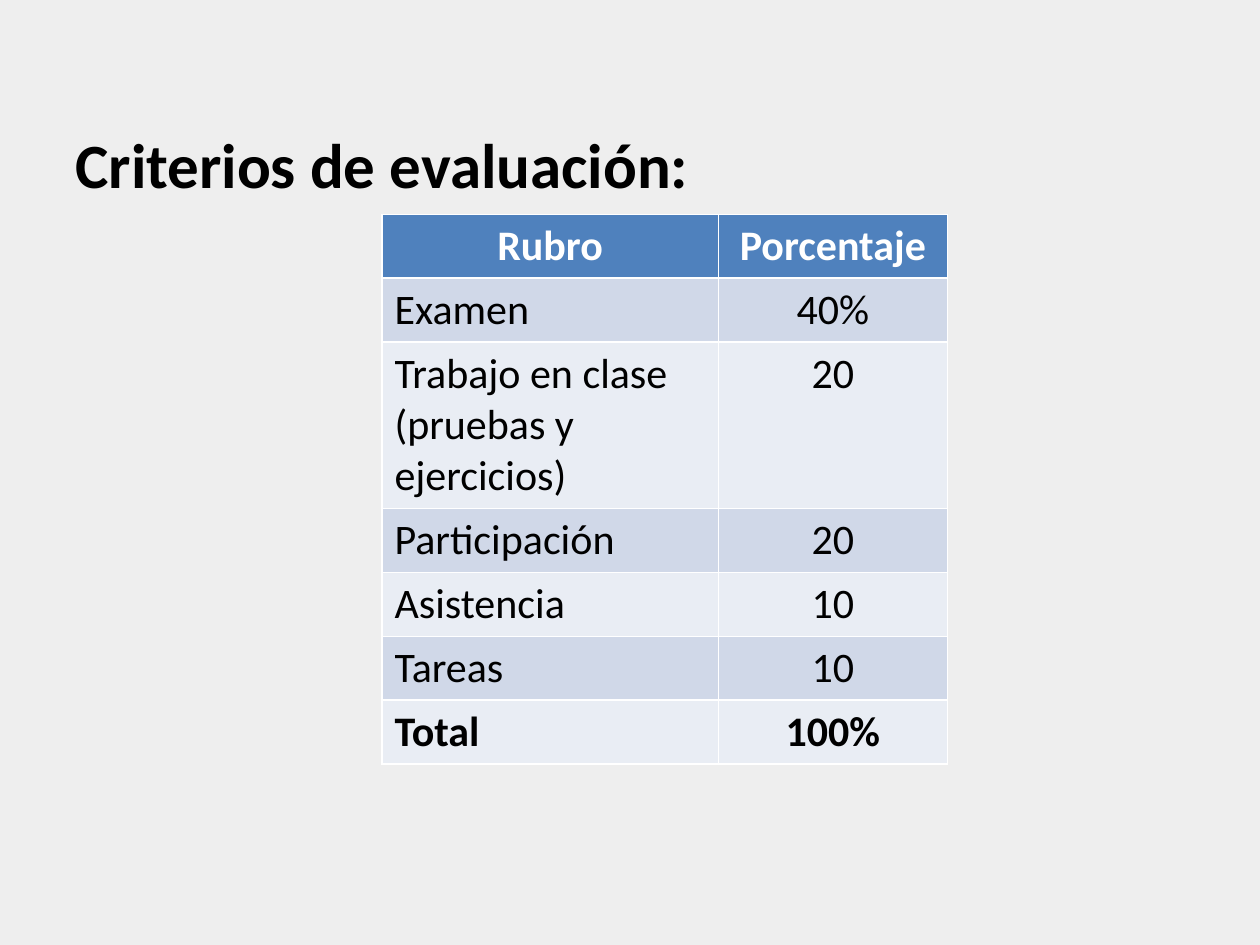
from pptx import Presentation
from pptx.dml.color import RGBColor
from pptx.enum.text import MSO_ANCHOR, PP_ALIGN
from pptx.util import Cm, Pt

TITLE = "Criterios de evaluación:"
ROWS = [
    ("Rubro", "Porcentaje"),
    ("Examen", "40%"),
    ("Trabajo en clase (pruebas y ejercicios)", "20"),
    ("Participación", "20"),
    ("Asistencia", "10"),
    ("Tareas", "10"),
    ("Total", "100%"),
]
WIDTHS = (6.78, 4.62)
ROW = 1.19
FONT = "Calibri"
BLACK = RGBColor(0x00, 0x00, 0x00)
WHITE = RGBColor(0xFF, 0xFF, 0xFF)
GREY = RGBColor(0xEE, 0xEE, 0xEE)
BLUE = RGBColor(0x4F, 0x81, 0xBD)
BANDS = (RGBColor(0xE9, 0xED, 0xF4), RGBColor(0xD0, 0xD8, 0xE8))


def style(para, size, color, bold):
    font = para.font
    font.name = FONT
    font.size = Pt(size)
    font.color.rgb = color
    font.bold = bold


def add_title(slide):
    box = slide.shapes.add_textbox(Cm(1.27), Cm(1), Cm(22.86), Cm(3.17))
    frame = box.text_frame
    frame.word_wrap = True
    frame.vertical_anchor = MSO_ANCHOR.BOTTOM
    frame.text = TITLE
    style(frame.paragraphs[0], 36, BLACK, True)


def add_grid(slide):
    last = len(ROWS) - 1
    table = slide.shapes.add_table(
        len(ROWS), len(WIDTHS), Cm(7.7), Cm(4.32),
        Cm(sum(WIDTHS)), Cm(ROW * len(ROWS))).table
    for col, width in zip(table.columns, WIDTHS):
        col.width = Cm(width)
    for r, texts in enumerate(ROWS):
        table.rows[r].height = Cm(ROW)
        head = r == 0
        for c, text in enumerate(texts):
            cell = table.cell(r, c)
            cell.text = text
            cell.fill.solid()
            cell.fill.fore_color.rgb = BLUE if head else BANDS[r % 2]
            para = cell.text_frame.paragraphs[0]
            para.alignment = PP_ALIGN.CENTER if head or c else PP_ALIGN.LEFT
            style(para, 24, WHITE if head else BLACK, r in (0, last))


def main():
    deck = Presentation()
    deck.slide_width, deck.slide_height = Cm(25.4), Cm(19.05)
    slide = deck.slides.add_slide(deck.slide_layouts[6])
    slide.background.fill.solid()
    slide.background.fill.fore_color.rgb = GREY
    add_grid(slide)
    add_title(slide)
    deck.save("out.pptx")


if __name__ == "__main__":
    main()
